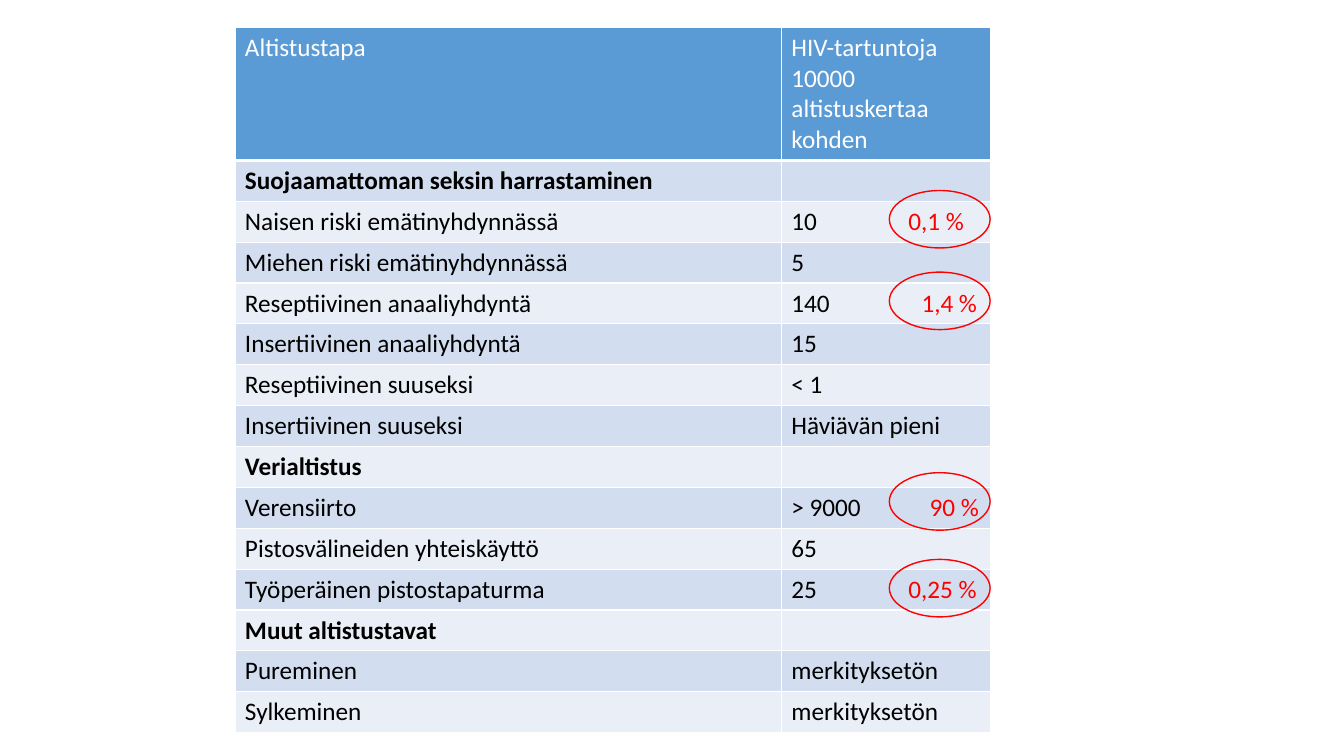
from lxml import etree
from pptx import Presentation, util as u
from pptx.dml.color import RGBColor
from pptx.enum import shapes, text
from pptx.oxml.ns import qn

WHITE, BLACK, RED = "FFFFFF", "000000", "FF0000"
HEAD, BANDS = "5B9BD5", ("EAEFF7", "D2DEEF")
TITLES = ("Altistustapa", "HIV-tartuntoja 10000 altistuskertaa kohden")
ROWS = [
    ("Suojaamattoman seksin harrastaminen",),
    ("Naisen riski emätinyhdynnässä", "10", "0,1 %", 1.16),
    ("Miehen riski emätinyhdynnässä", "5"),
    ("Reseptiivinen anaaliyhdyntä", "140", "1,4 %", 1.29),
    ("Insertiivinen anaaliyhdyntä", "15"),
    ("Reseptiivinen suuseksi", "< 1"),
    ("Insertiivinen suuseksi", "Häviävän pieni"),
    ("Verialtistus",),
    ("Verensiirto", "> 9000", "90 %", 1.37),
    ("Pistosvälineiden yhteiskäyttö", "65"),
    ("Työperäinen pistostapaturma", "25", "0,25 %", 1.16),
    ("Muut altistustavat",),
    ("Pureminen", "merkityksetön"),
    ("Sylkeminen", "merkityksetön"),
]
RINGS = (25.2, 36, 62.53, 74)


def tint(code):
    return RGBColor.from_string(code)


def write(para, words, color=BLACK, bold=False, size=18, face="Calibri"):
    run = para.add_run()
    run.text = words
    font = run.font
    font.name, font.size, font.bold = face, u.Pt(size), bold
    font.color.rgb = tint(color)


def stop(para, inches):
    tabs = etree.SubElement(para._p.get_or_add_pPr(), qn("a:tabLst"))
    etree.SubElement(tabs, qn("a:tab"), pos=str(u.Inches(inches)), algn="l")


class Page:
    def __init__(self, deck):
        self.slide = deck.slides.add_slide(deck.slide_layouts[6])
        self.wide, self.high = deck.slide_width, deck.slide_height

    def col(self, n):
        return int(self.wide * n / 100)

    def row(self, n):
        return int(self.high * n / 100)

    def box(self, x, y, w, h):
        return self.col(x), self.row(y), self.col(w), self.row(h)

    def table(self, x, y, widths, heights):
        frame = self.slide.shapes.add_table(
            len(heights), len(widths),
            *self.box(x, y, sum(widths), sum(heights)))
        grid = frame.table
        for part, n in zip(grid.columns, widths):
            part.width = self.col(n)
        for part, n in zip(grid.rows, heights):
            part.height = self.row(n)
        return grid

    def cell(self, cell, fill, base=1):
        props = cell._tc.get_or_add_tcPr()
        for side, size in (("L", 1), ("R", 1), ("T", 1), ("B", base)):
            line = etree.SubElement(props, qn("a:ln" + side), w=str(u.Pt(size)))
            paint = etree.SubElement(line, qn("a:solidFill"))
            etree.SubElement(paint, qn("a:srgbClr"), val=WHITE)
        cell.fill.solid()
        cell.fill.fore_color.rgb = tint(fill)
        cell.vertical_anchor = text.MSO_ANCHOR.TOP
        return cell.text_frame.paragraphs[0]

    def ring(self, x, y, w, h):
        ring = self.slide.shapes.add_shape(
            shapes.MSO_SHAPE.OVAL, *self.box(x, y, w, h))
        ring.shadow.inherit = False
        ring.fill.background()
        ring.line.color.rgb = tint(RED)
        ring.line.width = u.Pt(1)


def main():
    deck = Presentation()
    deck.slide_width, deck.slide_height = u.Inches(13.33), u.Inches(7.5)
    page = Page(deck)
    grid = page.table(17.48, 3.6, (40.66, 15.6), [17.47] + [5.4] * len(ROWS))
    for c, title in enumerate(TITLES):
        write(page.cell(grid.cell(0, c), HEAD, 3), title, WHITE)
    for r, (name, *rest) in enumerate(ROWS, 1):
        left, right = (page.cell(grid.cell(r, c), BANDS[r % 2]) for c in (0, 1))
        write(left, name, bold=not rest)
        if rest:
            write(right, rest[0])
        if len(rest) > 1:
            stop(right, rest[2])
            write(right, "\t" + rest[1], RED)
    for y in RINGS:
        page.ring(66.17, y, 7.5, 7.6)
    deck.save("out.pptx")


if __name__ == "__main__":
    main()
